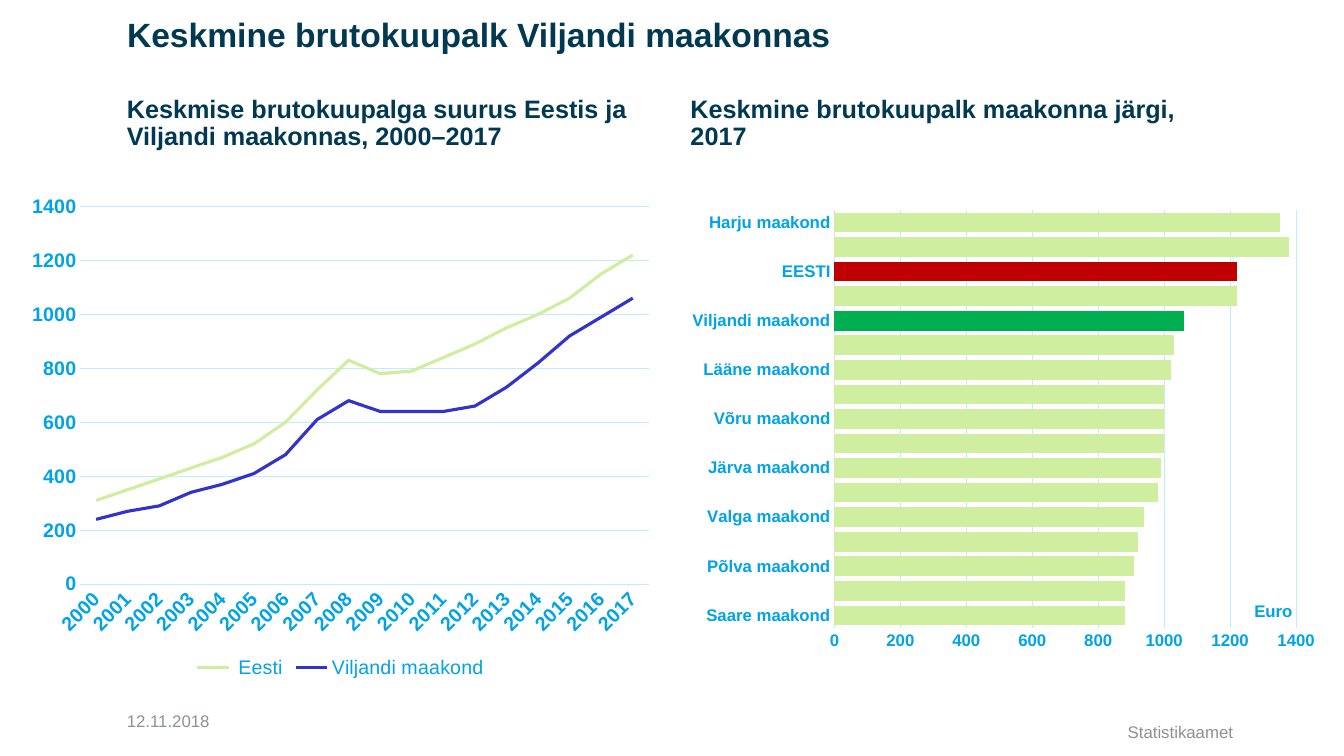
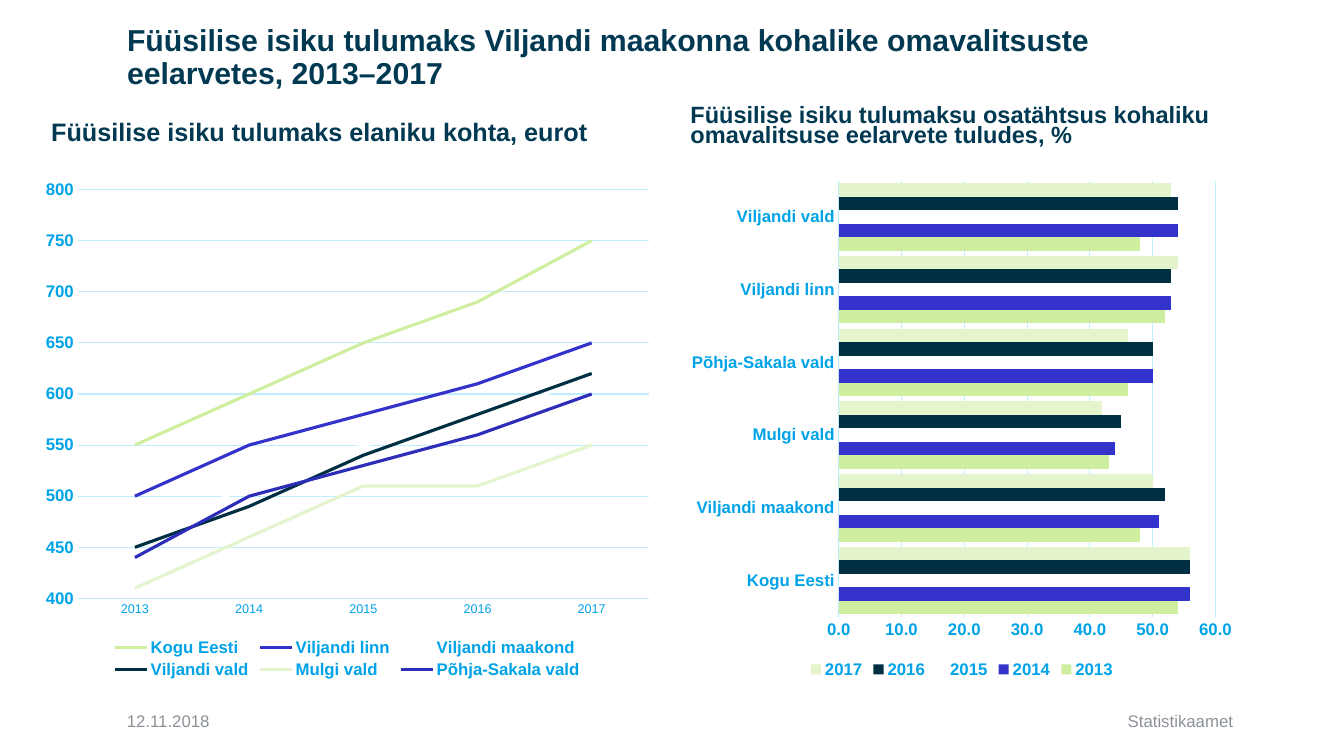
from dataclasses import dataclass
from typing import Optional

from pptx import Presentation
from pptx import util as u
from pptx.chart.data import CategoryChartData
from pptx.dml.color import RGBColor
from pptx.enum import chart as ch, text
from pptx.oxml import parse_xml
from pptx.oxml.ns import nsdecls, qn

# Shared look
NAVY = RGBColor(0x00, 0x39, 0x51)
SKY = RGBColor(0x00, 0xA3, 0xE7)
GRID = RGBColor(0xBF, 0xEC, 0xFF)
GREY = RGBColor(0x8C, 0x91, 0x98)
LIME = RGBColor(0xCF, 0xEE, 0xA0)
BLUE = RGBColor(0x33, 0x33, 0xCC)
WHITE = RGBColor(0xFF, 0xFF, 0xFF)
INK = RGBColor(0x00, 0x2F, 0x44)
PALE = RGBColor(0xE4, 0xF5, 0xCD)
INDIGO = RGBColor(0x2D, 0x2D, 0xB9)
GREEN = RGBColor(0x00, 0xB0, 0x50)
RED = RGBColor(0xC0, 0x00, 0x00)

FONT = "Arial"
LEFT, RIGHT = 1.16, 12.33
HALF = 6.75  # left edge of the right-hand column
FOOTER_TOP = 6.95
LINE = ch.XL_CHART_TYPE.LINE
BAR = ch.XL_CHART_TYPE.BAR_CLUSTERED
Box = tuple[float, float, float, float]


@dataclass(frozen=True)
class Label:
    text: str
    box: Box
    size: float
    color: RGBColor = NAVY
    bold: bool = True
    spacing: float = 0.9
    anchor: text.MSO_ANCHOR = text.MSO_ANCHOR.BOTTOM
    align: text.PP_ALIGN = text.PP_ALIGN.LEFT


@dataclass(frozen=True)
class Series:
    name: str
    color: RGBColor
    values: list[int]


@dataclass(frozen=True)
class Graph:
    kind: ch.XL_CHART_TYPE
    box: Box
    categories: list[str]
    series: list[Series]
    scale: tuple[int, int, int]  # minimum, maximum, step
    value_size: int = 12
    category_size: int = 12
    category_bold: bool = True
    category_rotation: Optional[int] = None
    number_format: str = "General"
    legend_size: Optional[int] = None
    legend_bold: bool = True
    gap: int = 39
    plot_box: Optional[Box] = None
    unit: Optional[str] = None
    unit_place: tuple[float, float] = (0.89, 0.83)
    highlights: tuple[tuple[int, RGBColor], ...] = ()


@dataclass(frozen=True)
class Page:
    title: Label
    subtitles: list[Label]
    graphs: list[Graph]
    source_top: float = FOOTER_TOP


def style_font(font, size: float, color: RGBColor, bold: bool) -> None:
    for name, value in {"name": FONT, "size": u.Pt(size), "bold": bold}.items():
        setattr(font, name, value)
    font.color.rgb = color


def fill_label(shape, label: Label) -> None:
    for side, value in zip(("left", "top", "width", "height"), label.box):
        setattr(shape, side, u.Inches(value))
    frame = shape.text_frame
    frame.text = label.text
    frame_format = {
        "word_wrap": True,
        "auto_size": text.MSO_AUTO_SIZE.NONE,
        "vertical_anchor": label.anchor,
    }
    for name, value in frame_format.items():
        setattr(frame, name, value)
    paragraph = frame.paragraphs[0]
    paragraph.alignment = label.align
    paragraph.line_spacing = label.spacing
    style_font(paragraph.runs[0].font, label.size, label.color, label.bold)


def add_label(slide, label: Label) -> None:
    box = [u.Inches(value) for value in label.box]
    fill_label(slide.shapes.add_textbox(*box), label)


def set_layout(parent, values: dict[str, float], inner: bool = False) -> None:
    """Place a plot area or an axis title by fractions of the chart."""
    target = '<c:layoutTarget val="inner"/>' if inner else ""
    modes = "".join(f'<c:{key}Mode val="edge"/>' for key in ("x", "y"))
    places = "".join(f'<c:{key} val="{value}"/>' for key, value in values.items())
    old = parent.find(qn("c:layout"))
    if old is not None:
        parent.remove(old)
    index = 0 if parent.find(qn("c:tx")) is None else 1
    parent.insert(index, parse_xml(
        f"<c:layout {nsdecls('c')}><c:manualLayout>{target}{modes}{places}"
        "</c:manualLayout></c:layout>"))


def style_axes(chart, graph: Graph) -> None:
    category, value = chart.category_axis, chart.value_axis
    sizes = ((category, graph.category_size, graph.category_bold),
             (value, graph.value_size, True))
    for axis, size, bold in sizes:
        axis.major_tick_mark = axis.minor_tick_mark = ch.XL_TICK_MARK.NONE
        style_font(axis.tick_labels.font, size, SKY, bold)
    if graph.category_rotation is not None:
        body = category._element.find(qn("c:txPr")).find(qn("a:bodyPr"))
        body.set("rot", str(graph.category_rotation * 60000))

    scale_names = ("minimum_scale", "maximum_scale", "major_unit")
    for name, number in zip(scale_names, graph.scale):
        setattr(value, name, number)
    value.has_major_gridlines = True
    for line in (category.format.line, value.major_gridlines.format.line):
        line.color.rgb = GRID
        line.width = u.Pt(0.75)
    value.format.line.fill.background()
    value.tick_labels.number_format = graph.number_format
    value.tick_labels.number_format_is_linked = False

    if graph.unit:
        frame = value.axis_title.text_frame
        frame.text = graph.unit
        style_font(frame.paragraphs[0].runs[0].font, 12, SKY, True)
        frame._txBody.bodyPr.set("rot", "0")
        set_layout(value.axis_title._element, dict(zip("xy", graph.unit_place)))


def add_graph(slide, graph: Graph) -> None:
    data = CategoryChartData()
    data.categories = graph.categories
    for series in graph.series:
        data.add_series(series.name, series.values)
    box = [u.Inches(value) for value in graph.box]
    chart = slide.shapes.add_chart(graph.kind, *box, data).chart
    chart.has_title = False
    style_font(chart.font, 10, NAVY, False)
    style_axes(chart, graph)

    # Series colours
    plot = chart.plots[0]
    plot.vary_by_categories = False
    if graph.kind == BAR:
        plot.gap_width = graph.gap
    for drawn, series in zip(plot.series, graph.series):
        if graph.kind == LINE:
            drawn.smooth = False
            drawn.format.line.color.rgb = series.color
            drawn.format.line.width = u.Pt(2.25)
        else:
            drawn.format.fill.solid()
            drawn.format.fill.fore_color.rgb = series.color
            for index, color in graph.highlights:
                fill = drawn.points[index].format.fill
                fill.solid()
                fill.fore_color.rgb = color

    # Legend and plot area
    chart.has_legend = graph.legend_size is not None
    if graph.legend_size is not None:
        chart.legend.position = ch.XL_LEGEND_POSITION.BOTTOM
        chart.legend.include_in_layout = False
        style_font(chart.legend.font, graph.legend_size, SKY, graph.legend_bold)
    if graph.plot_box:
        plot_area = chart._chartSpace.chart.plotArea
        set_layout(plot_area, dict(zip("xywh", graph.plot_box)), inner=True)


def add_page(deck, page: Page) -> None:
    slide = deck.slides.add_slide(deck.slide_layouts[5])
    fill_label(slide.shapes.title, page.title)
    for subtitle in page.subtitles:
        add_label(slide, subtitle)
    footer = dict(size=12, color=GREY, bold=False, spacing=1.0,
                  anchor=text.MSO_ANCHOR.MIDDLE)
    add_label(slide, Label("12.11.2018", (LEFT, FOOTER_TOP, 2.76, 0.4), **footer))
    add_label(slide, Label("Statistikaamet", (4.42, page.source_top, 7.91, 0.4),
                           align=text.PP_ALIGN.RIGHT, **footer))
    for graph in page.graphs:
        add_graph(slide, graph)


def title(wording: str, top: float, height: float, size: float) -> Label:
    return Label(wording, (LEFT, top, RIGHT - LEFT, height), size,
                 anchor=text.MSO_ANCHOR.MIDDLE)


# Average gross monthly wages
wages = Page(
    title("Keskmine brutokuupalk Viljandi maakonnas", 0.09, 0.54, 24),
    [Label("Keskmise brutokuupalga suurus Eestis ja Viljandi maakonnas, 2000–2017",
           (LEFT, 0.78, 5.4, 0.77), 18),
     Label("Keskmine brutokuupalk maakonna järgi, 2017",
           (HALF, 0.78, RIGHT - HALF, 0.77), 18)],
    [Graph(BAR, (HALF, 1.84, 6.36, 4.93),
           ["Saare maakond", "Hiiu maakond", "Põlva maakond", "Jõgeva maakond",
            "Valga maakond", "Lääne-Viru maakond", "Järva maakond",
            "Ida-Viru maakond", "Võru maakond", "Pärnu maakond", "Lääne maakond",
            "Rapla maakond", "Viljandi maakond", "Tartu maakond", "EESTI",
            "..Tallinn", "Harju maakond"],
           [Series("Series 1", LIME,
                   [880, 880, 910, 920, 940, 980, 990, 1000, 1000, 1000, 1020,
                    1030, 1060, 1220, 1220, 1380, 1350])],
           (0, 1400, 200), gap=25, plot_box=(0.24, 0.05, 0.72, 0.84),
           unit="Euro", highlights=((12, GREEN), (14, RED))),
     Graph(LINE, (0.19, 1.84, 6.37, 4.93),
           [str(year) for year in range(2000, 2018)],
           [Series(" Eesti", LIME,
                   [310, 350, 390, 430, 470, 520, 600, 720, 830, 780, 790, 840,
                    890, 950, 1000, 1060, 1150, 1220]),
            Series("Viljandi maakond", BLUE,
                   [240, 270, 290, 340, 370, 410, 480, 610, 680, 640, 640, 640,
                    660, 730, 820, 920, 990, 1060])],
           (0, 1400, 200), value_size=14, category_size=14, category_rotation=-45,
           number_format="0", legend_size=14, legend_bold=False)],
    source_top=7.06,
)

# Income tax in municipal budgets
taxes = Page(
    title("Füüsilise isiku tulumaks Viljandi maakonna kohalike omavalitsuste "
          "eelarvetes, 2013–2017", 0.17, 0.82, 21.6),
    [Label("Füüsilise isiku tulumaks elaniku kohta, eurot",
           (0.41, 0.97, 6.15, 0.54), 18),
     Label("Füüsilise isiku tulumaksu osatähtsus kohaliku omavalitsuse eelarvete "
           "tuludes, %", (HALF, 0.98, RIGHT - HALF, 0.53), 16.8, spacing=0.7)],
    [Graph(LINE, (0.33, 1.69, 6.23, 5.08),
           [str(year) for year in range(2013, 2018)],
           [Series("Kogu Eesti", LIME, [550, 600, 650, 690, 750]),
            Series("Viljandi linn", BLUE, [500, 550, 580, 610, 650]),
            Series("Viljandi maakond", WHITE, [460, 510, 550, 570, 620]),
            Series("Viljandi vald", INK, [450, 490, 540, 580, 620]),
            Series("Mulgi vald", PALE, [410, 460, 510, 510, 550]),
            Series("Põhja-Sakala vald", INDIGO, [440, 500, 530, 560, 600])],
           (400, 800, 50), category_size=9, category_bold=False, legend_size=12),
     Graph(BAR, (HALF, 1.69, RIGHT - HALF, 5.08),
           ["Kogu Eesti", "Viljandi maakond", "Mulgi vald", "Põhja-Sakala vald",
            "Viljandi linn", "Viljandi vald"],
           [Series("2013", LIME, [54, 48, 43, 46, 52, 48]),
            Series("2014", BLUE, [56, 51, 44, 50, 53, 54]),
            Series("2015", WHITE, [56, 52, 44, 49, 54, 55]),
            Series("2016", INK, [56, 52, 45, 50, 53, 54]),
            Series("2017", PALE, [56, 50, 42, 46, 54, 53])],
           (0, 60, 10), number_format="0.0", legend_size=12)],
)


def main() -> None:
    deck = Presentation()
    deck.slide_width, deck.slide_height = u.Inches(13.33), u.Inches(7.5)
    for page in (wages, taxes):
        add_page(deck, page)
    deck.save("out.pptx")


if __name__ == "__main__":
    main()
